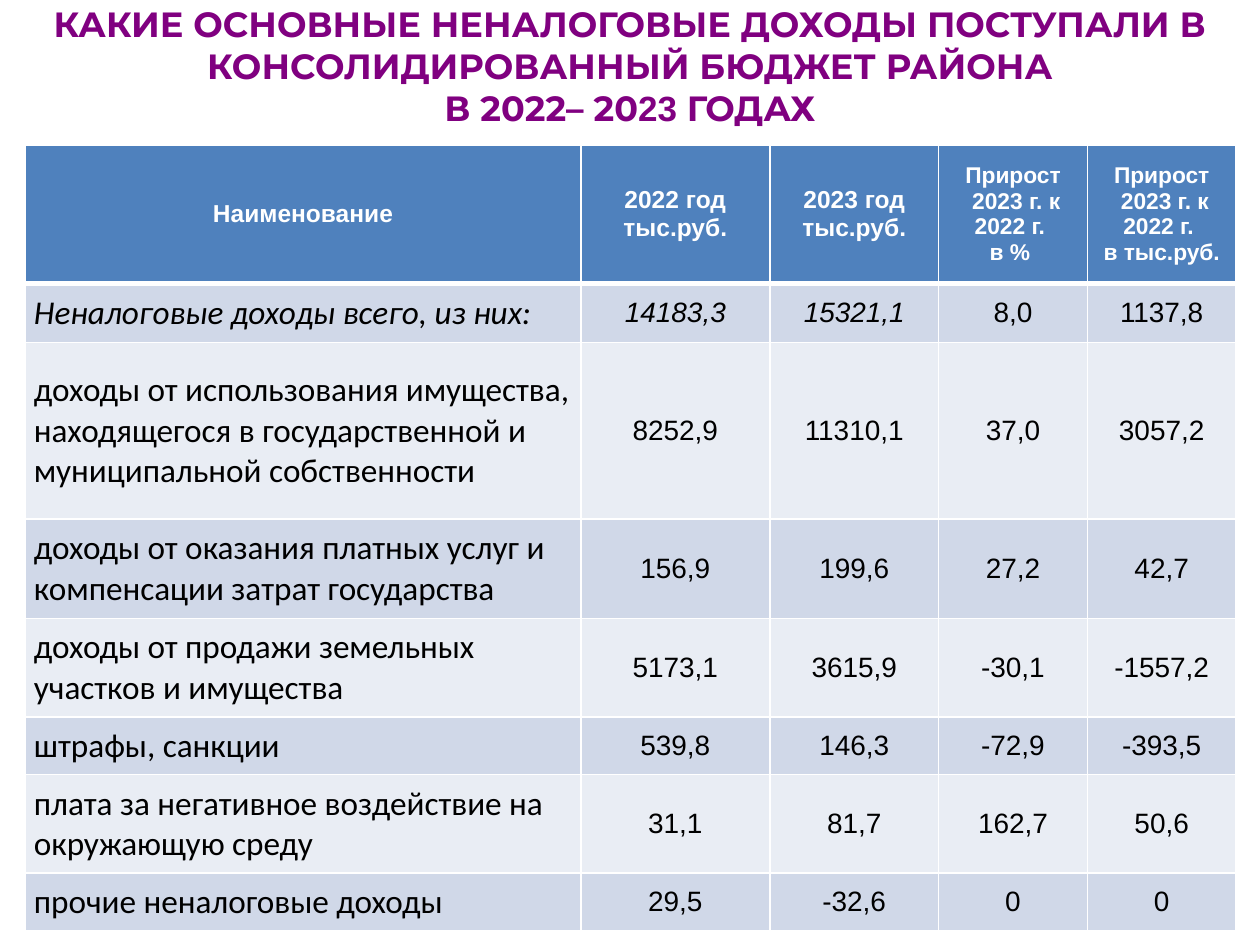
import pptx
import pptx.dml.color
import pptx.enum.text
import pptx.oxml
import pptx.oxml.ns
import pptx.util
from pptx.util import Inches

ALIGN = pptx.enum.text.PP_ALIGN
ANCHOR = pptx.enum.text.MSO_ANCHOR

TITLE = [
    "КАКИЕ ОСНОВНЫЕ НЕНАЛОГОВЫЕ ДОХОДЫ ПОСТУПАЛИ В",
    "КОНСОЛИДИРОВАННЫЙ БЮДЖЕТ РАЙОНА",
    [("В 2022– 20", "Montserrat"), ("23 ", "Arial"), ("ГОДАХ", "Montserrat")],
]
GROWTH = ["Прирост", " 2023 г. к 2022 г. "]
HEADERS = [
    (["Наименование"], 14),
    (["2022 год", "тыс.руб."], 14),
    (["2023 год", "тыс.руб."], 14),
    (GROWTH + ["в % "], 13),
    (GROWTH + ["в тыс.руб."], 13),
]
INCOME = [
    ("Неналоговые доходы всего, из них:", "14183,3", "15321,1", "8,0", "1137,8"),
    ("доходы от использования имущества, находящегося в государственной "
     "и муниципальной собственности", "8252,9", "11310,1", "37,0", "3057,2"),
    ("доходы от оказания платных услуг и компенсации затрат государства",
     "156,9", "199,6", "27,2", "42,7"),
    ("доходы от продажи земельных участков и имущества",
     "5173,1", "3615,9", "-30,1", "-1557,2"),
    ("штрафы, санкции", "539,8", "146,3", "-72,9", "-393,5"),
    ("плата за негативное воздействие на окружающую среду",
     "31,1", "81,7", "162,7", "50,6"),
    ("прочие неналоговые доходы", "29,5", "-32,6", "0", "0"),
]
COLUMN_WIDTHS = [4.41, 1.5, 1.34, 1.18, 1.18]
ROW_HEIGHTS = [1.1, 0.47, 1.4, 0.79, 0.77, 0.45, 0.77, 0.45]


def rgb(hex_color):
    return pptx.dml.color.RGBColor.from_string(hex_color)


def write(frame, lines, size=16, font="Arial", color="000000", bold=False,
          italic=False, align=ALIGN.CENTER):
    """Write one paragraph per line; a line is a string or (text, font) runs."""
    for index, line in enumerate(lines):
        paragraph = frame.paragraphs[0] if index == 0 else frame.add_paragraph()
        paragraph.alignment = align
        for text, face in [(line, font)] if isinstance(line, str) else line:
            run = paragraph.add_run()
            run.text = text
            run.font.name = face
            run.font.size = pptx.util.Pt(size)
            run.font.bold = bold
            run.font.italic = italic
            run.font.color.rgb = rgb(color)


def style_cell(cell, fill, top=1, bottom=1):
    """Fill the cell and give it white borders, widths in points."""
    cell.vertical_anchor = ANCHOR.MIDDLE
    cell.fill.solid()
    cell.fill.fore_color.rgb = rgb(fill)
    properties = cell._tc.get_or_add_tcPr()
    sides = [("lnL", 1), ("lnR", 1), ("lnT", top), ("lnB", bottom)]
    for position, (side, width) in enumerate(sides):
        properties.insert(position, pptx.oxml.parse_xml(
            f'<a:{side} {pptx.oxml.ns.nsdecls("a")} w="{pptx.util.Pt(width)}">'
            f'<a:solidFill><a:srgbClr val="FFFFFF"/></a:solidFill></a:{side}>'))


def add_title(slide, left, top, width, height):
    title = slide.shapes.add_textbox(left, top, width, height)
    title.text_frame.word_wrap = True
    write(title.text_frame, TITLE, size=20, font="Montserrat",
          color="800080", bold=True)


def add_income_table(slide, left, top, width, height):
    table = slide.shapes.add_table(
        len(ROW_HEIGHTS), len(COLUMN_WIDTHS), left, top, width, height).table
    for column, share in zip(table.columns, COLUMN_WIDTHS):
        column.width = int(width * share / sum(COLUMN_WIDTHS))
    for row, share in zip(table.rows, ROW_HEIGHTS):
        row.height = int(height * share / sum(ROW_HEIGHTS))

    # Header row
    for column, (lines, size) in enumerate(HEADERS):
        cell = table.cell(0, column)
        style_cell(cell, "4F81BD", bottom=3)
        write(cell.text_frame, lines, size=size, color="FFFFFF", bold=True)

    # Income rows, banded; the total is partly in italics
    for row, values in enumerate(INCOME, start=1):
        for column, value in enumerate(values):
            cell = table.cell(row, column)
            style_cell(cell, "D0D8E8" if row % 2 else "E9EDF4",
                       top=3 if row == 1 else 1)
            italic = row == 1 and column < 3
            if column == 0:
                cell.margin_left = cell.margin_right = Inches(0.07)
                cell.margin_top = cell.margin_bottom = Inches(0.07)
                write(cell.text_frame, [value], size=19, font="Calibri",
                      italic=italic, align=ALIGN.LEFT)
            else:
                write(cell.text_frame, [value], italic=italic)


def main():
    presentation = pptx.Presentation()
    presentation.slide_width = Inches(10)
    presentation.slide_height = Inches(7.5)
    slide = presentation.slides.add_slide(presentation.slide_layouts[6])
    add_income_table(slide, Inches(0.2), Inches(1.15), Inches(9.61), Inches(6.2))
    add_title(slide, Inches(0), Inches(-0.03), Inches(10), Inches(1.1))
    presentation.save("out.pptx")


if __name__ == "__main__":
    main()
